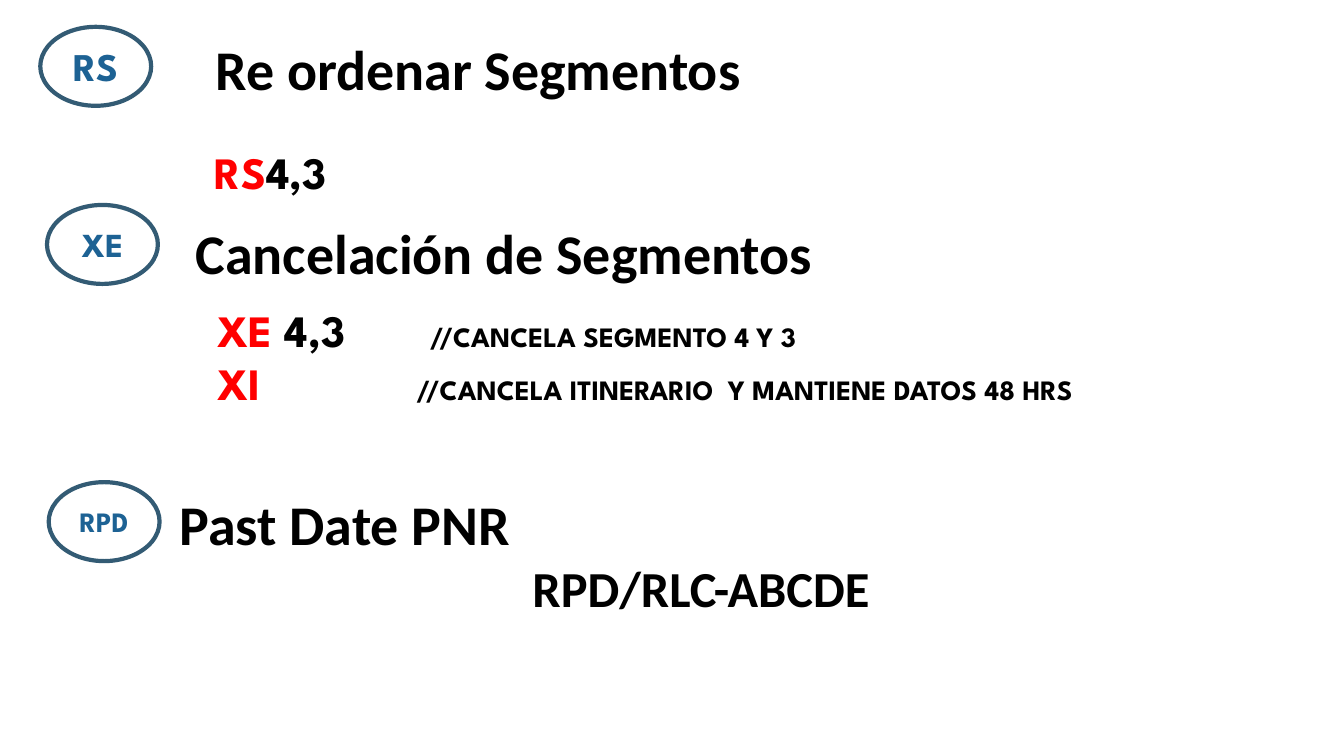
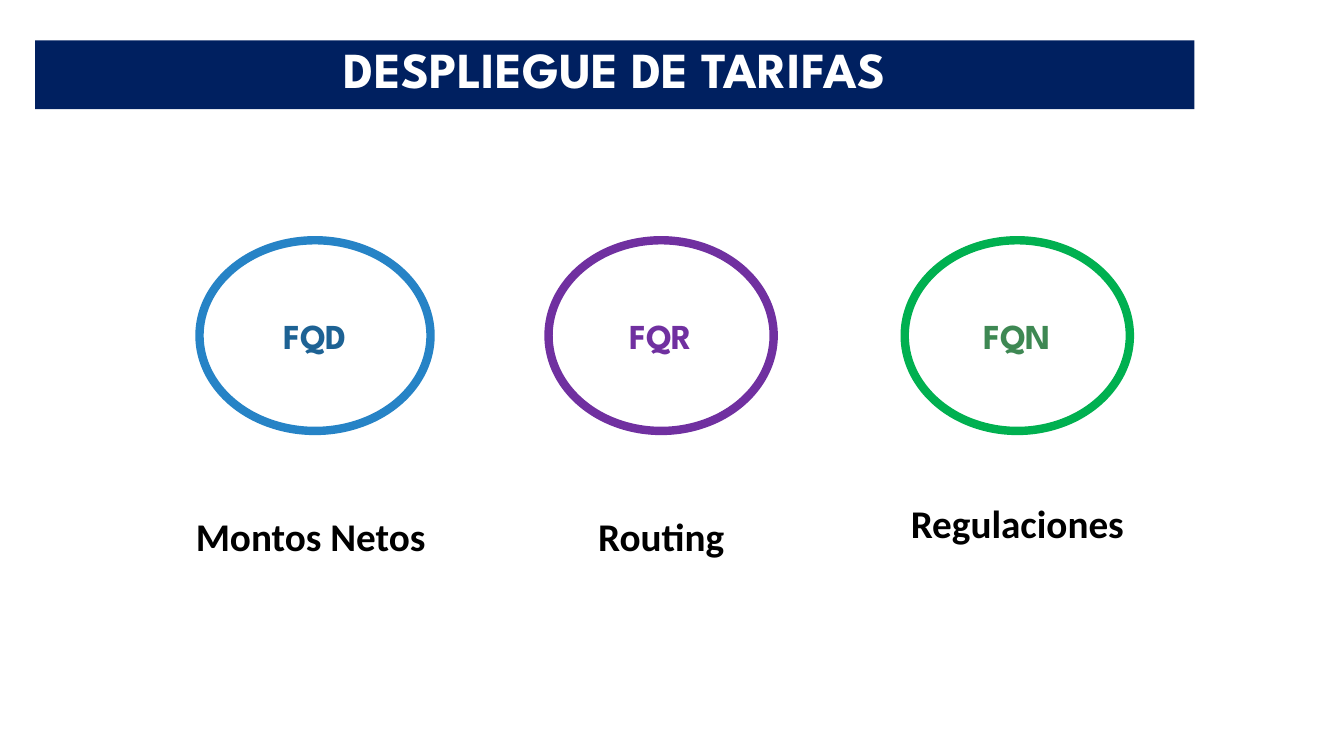
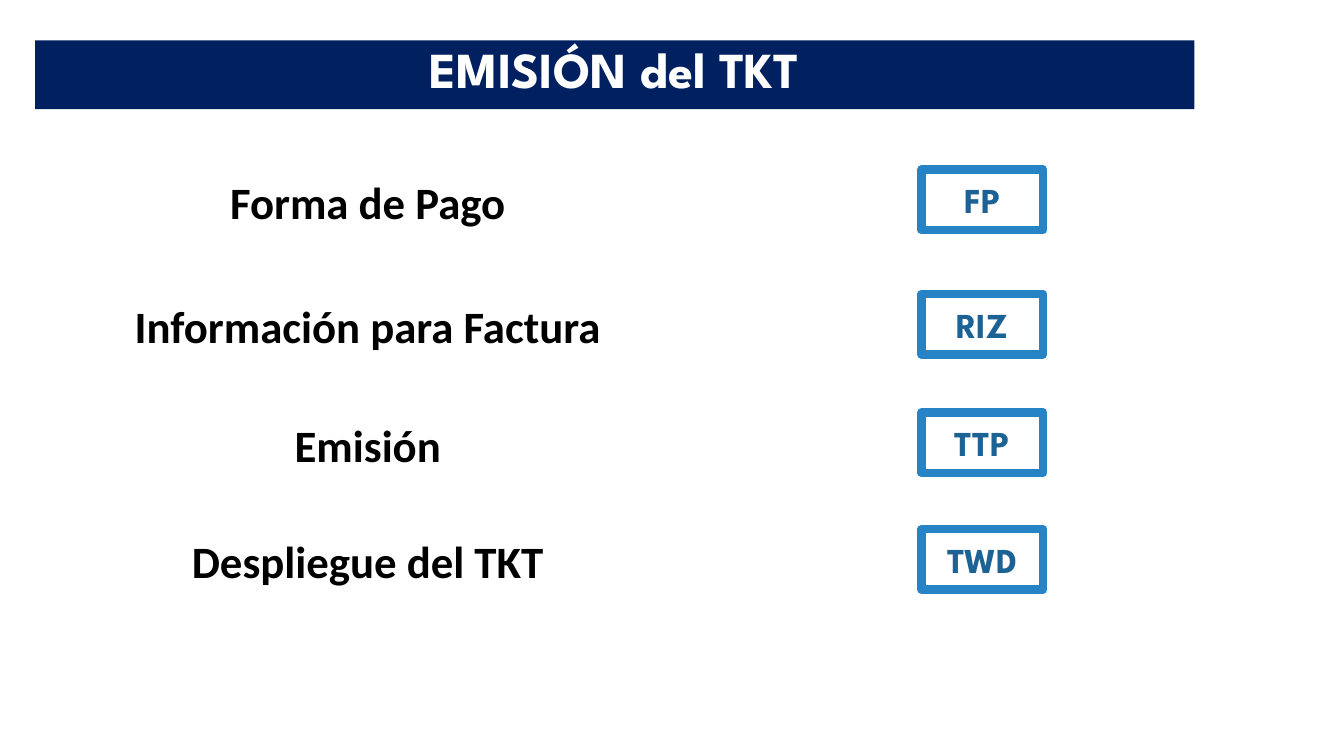
from lxml import etree
from pptx import Presentation
from pptx.dml.color import RGBColor
from pptx.enum.shapes import MSO_SHAPE
from pptx.enum.text import MSO_ANCHOR, MSO_AUTO_SIZE, PP_ALIGN
from pptx.oxml.ns import qn
from pptx.util import Inches, Pt

OVAL, RECT = MSO_SHAPE.OVAL, MSO_SHAPE.RECTANGLE
TOP, MIDDLE = MSO_ANCHOR.TOP, MSO_ANCHOR.MIDDLE
LEFT, CENTER = PP_ALIGN.LEFT, PP_ALIGN.CENTER
GROW = MSO_AUTO_SIZE.SHAPE_TO_FIT_TEXT

# The slide is a grid of 160 columns by 90 rows
WIDE, HIGH = Inches(13.333), Inches(7.5)
CELL = HIGH / 90

BODY, HEAD = "Calibri", "League Spartan"
COLORS = {
    "white": "FFFFFF", "black": "000000", "red": "FF0000",
    "navy": "002060", "slate": "335B74", "ink": "1D6294",
    "blue": "2683C6", "purple": "7030A0", "green": "00B050",
    "moss": "3E8853",
}


def color(name):
    return RGBColor.from_string(COLORS[name])


def grid(count):
    return round(count * CELL)


def write(par, text, size=32, font=BODY, tint="black"):
    """Add one bold run to a paragraph."""
    run = par.add_run()
    run.text = text
    run.font.size = Pt(size)
    run.font.name = font
    run.font.bold = True
    run.font.color.rgb = color(tint)


class Deck:
    def __init__(self):
        self.file = Presentation()
        self.file.slide_width, self.file.slide_height = WIDE, HIGH
        self.slide = None

    def page(self):
        self.slide = self.file.slides.add_slide(self.file.slide_layouts[6])

    def label(self, box, *texts, align=LEFT, **style):
        """Text box; returns its paragraphs, one for each text."""
        frame = self.slide.shapes.add_textbox(*map(grid, box)).text_frame
        frame.word_wrap = True
        frame.auto_size = GROW
        pars = [frame.paragraphs[0]]
        pars += [frame.add_paragraph() for _ in texts[1:]]
        for par, text in zip(pars, texts):
            par.alignment = align
            write(par, text, **style)
        return pars

    def badge(self, kind, box, text, line=None, weight=6, fill="white",
              anchor=MIDDLE, space=None, **style):
        """Filled shape with a centred text."""
        shape = self.slide.shapes.add_shape(kind, *map(grid, box))
        shape.shadow.inherit = False
        shape.fill.solid()
        shape.fill.fore_color.rgb = color(fill)
        if line:
            shape.line.color.rgb = color(line)
            shape.line.width = Pt(weight)
        else:
            shape.line.fill.background()
        frame = shape.text_frame
        frame.word_wrap = True
        frame.vertical_anchor = anchor
        par = frame.paragraphs[0]
        par.alignment = CENTER
        if space:
            par.line_spacing = space
        write(par, text, font=HEAD, **style)

    def band(self, text):
        self.badge(RECT, (4.2, 4.8, 138, 8.2), text, fill="navy",
                   anchor=TOP, space=0.9, size=36, tint="white")

    def stop(self, par, at):
        """Set a tab stop, in columns from the text edge."""
        tabs = etree.SubElement(par._p.get_or_add_pPr(), qn("a:tabLst"))
        etree.SubElement(tabs, qn("a:tab"), pos=str(grid(at)), algn="l")

    def indent(self, par, by):
        par._p.get_or_add_pPr().set("marL", str(grid(by)))


def segments(deck):
    deck.page()

    # Headings with their command badges
    heads = (
        ("RS", 28, 4.8, 3.2, "Re ordenar Segmentos", 24.5, 3.5),
        ("XE", 24, 5.6, 24.4, "Cancelación de Segmentos", 22.1, 25.4),
        ("RPD", 20, 5.8, 57.4, "Past Date PNR", 20.2, 57.7),
    )
    for code, size, col, row, text, left, top in heads:
        par, = deck.label((left, top, 110, 9.2), text, size=40)
        deck.badge(OVAL, (col, row, 13.2, 9.4), code, "slate", 3,
                   size=size, tint="ink")

    # Past date entry, as a second line of the last heading
    last = deck.slide.shapes[-2].text_frame.add_paragraph()
    deck.indent(last, 42)
    write(last, "RPD/RLC-ABCDE", size=36)

    # Reorder entry
    par, = deck.label((24.4, 16.6, 32.5, 7.7), "RS", font=HEAD, tint="red")
    write(par, "4,3", font=HEAD)

    # Cancel entries, each with a note at its tab stop
    pars = deck.label((24.7, 35.4, 125.3, 14.2), "XE ", "XI",
                      font=HEAD, tint="red")
    write(pars[0], "4,3", font=HEAD)
    notes = (
        (25.3, "//CANCELA SEGMENTO 4 Y 3"),
        (23.7, "//CANCELA ITINERARIO  Y MANTIENE DATOS 48 HRS"),
    )
    for par, (at, note) in zip(pars, notes):
        deck.stop(par, at)
        write(par, "\t" + note, size=20, font=HEAD)


def fares(deck):
    deck.page()
    deck.band("DESPLIEGUE DE TARIFAS")

    # Rings with captions on the same centre line
    rings = (
        ("FQD", 37.5, 27.5, "blue", "ink", "Montos Netos ", 60.4),
        ("FQR", 78.7, 26.8, "purple", "purple", "Routing", 60.4),
        ("FQN", 121.1, 26.8, "green", "moss", "Regulaciones", 58.9),
    )
    for code, mid, wide, line, tint, text, top in rings:
        deck.badge(OVAL, (mid - wide / 2, 28.6, wide, 22.7), code, line,
                   size=25, tint=tint)
        deck.label((mid - 16.25, top, 32.5, 6.8), text, align=CENTER, size=28)


def ticket(deck):
    deck.page()
    deck.band("EMISIÓN del TKT")

    # Steps and their commands
    steps = (
        (20.2, "Forma de Pago", "FP"),
        (35, "Información para Factura", "RIZ"),
        (49.1, "Emisión", "TTP"),
        (63, "Despliegue del TKT", "TWD"),
    )
    for row, text, code in steps:
        deck.label((13.3, row, 61, 7.7), text, align=CENTER)
        deck.badge(RECT, (109.7, row, 14.5, 7.2), code, "blue",
                   size=25, tint="ink")


def main():
    deck = Deck()
    segments(deck)
    fares(deck)
    ticket(deck)
    deck.file.save("out.pptx")


if __name__ == "__main__":
    main()
